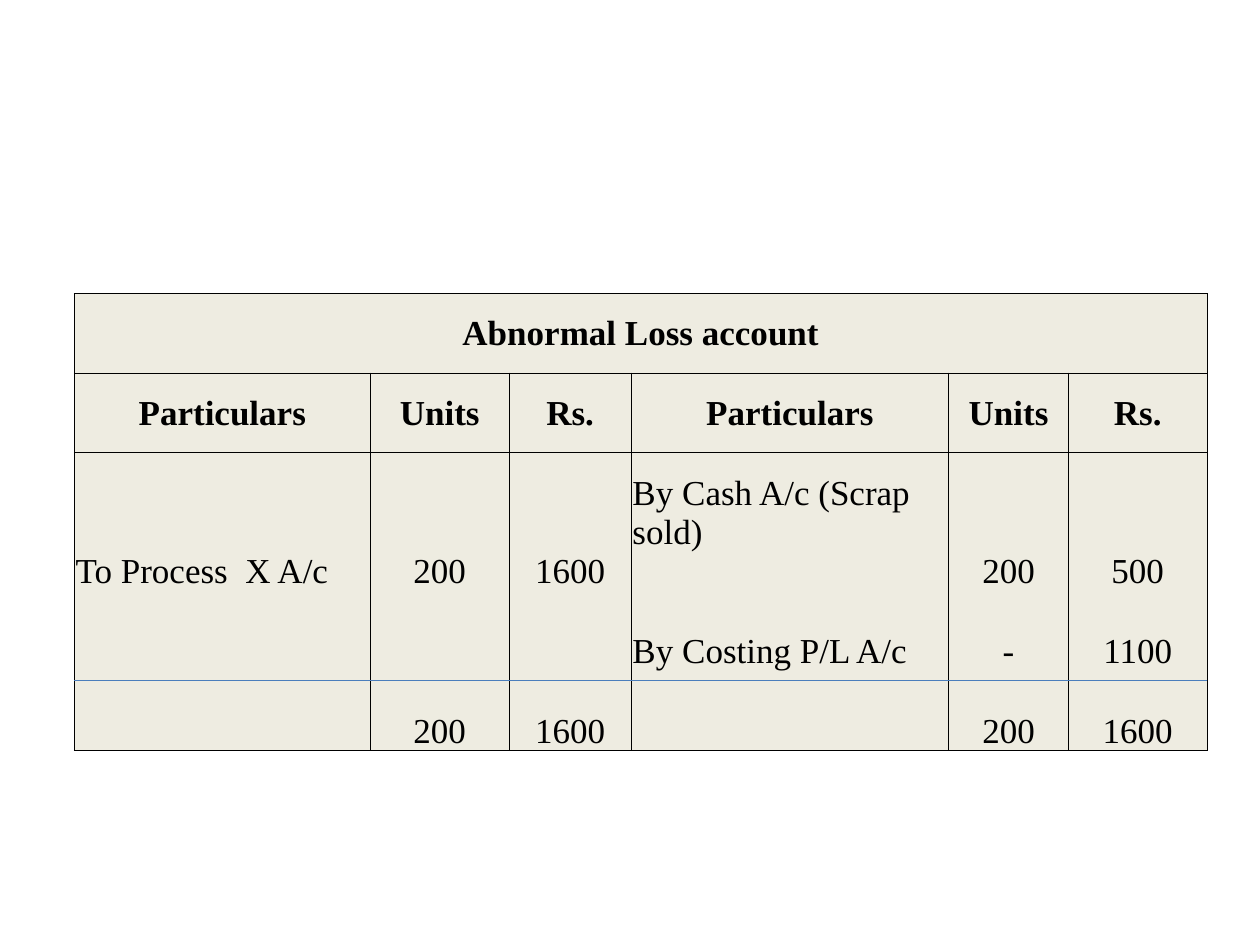
import pptx
import pptx.dml.color
import pptx.enum.shapes
import pptx.enum.text
import pptx.oxml
import pptx.oxml.ns
import pptx.util
from pptx.util import Inches

COLORS = {"ink": "000000", "cell": "EEECE1", "rule": "4B7EBC"}
FONT = "Times New Roman"
COLUMNS = [2.35, 1.1, 0.97, 2.52, 0.95, 1.1]
ROWS = [0.63, 0.63, 1.1, 0.64, 0.63]
HEADINGS = ["Particulars", "Units", "Rs."]
TOTALS = ["", "200", "1600"]
LEDGER = [
    ["Abnormal Loss account"] + [""] * 5,
    HEADINGS * 2,
    ["To Process  X A/c", "200", "1600", "By Cash A/c (Scrap sold)", "200", "500"],
    ["", "", "", "By Costing P/L A/c", "-", "1100"],
    TOTALS * 2,
]
LEDGER_BOX = (0.59, 2.33, sum(COLUMNS), sum(ROWS))
HEADER_ROWS = 2
TEXT_COLUMNS = (0, 3)


def color(name):
    """Return the named colour as an RGB value."""
    return pptx.dml.color.RGBColor.from_string(COLORS[name])


def set_borders(cell, sides):
    """Draw thin borders on the given sides and clear the others."""
    properties = cell._tc.get_or_add_tcPr()
    for index, side in enumerate("LRTB"):
        if side in sides:
            fill = f'<a:solidFill><a:srgbClr val="{COLORS["ink"]}"/></a:solidFill>'
        else:
            fill = "<a:noFill/>"
        border = pptx.oxml.parse_xml(
            f'<a:ln{side} {pptx.oxml.ns.nsdecls("a")} w="6350">{fill}</a:ln{side}>'
        )
        properties.insert(index, border)


def write_cell(cell, text, header, centered):
    """Fill one cell and set its text."""
    cell.fill.solid()
    cell.fill.fore_color.rgb = color("cell")
    cell.margin_left = cell.margin_right = cell.margin_top = Inches(0.01)
    cell.margin_bottom = 0
    anchors = pptx.enum.text.MSO_ANCHOR
    cell.vertical_anchor = anchors.MIDDLE if header else anchors.BOTTOM
    if not text:
        return
    para = cell.text_frame.paragraphs[0]
    aligns = pptx.enum.text.PP_ALIGN
    para.alignment = aligns.CENTER if centered else aligns.LEFT
    span = para.add_run()
    span.text = text
    span.font.name = FONT
    span.font.size = pptx.util.Pt(20)
    span.font.bold = header
    span.font.color.rgb = color("ink")


def add_ledger(page, box):
    """Add the account table in the given box."""
    frame = page.shapes.add_table(len(ROWS), len(COLUMNS), *map(Inches, box))
    table = frame.table
    table.first_row = table.horz_banding = False
    for column, width in zip(table.columns, COLUMNS):
        column.width = Inches(width)
    for row, height in zip(table.rows, ROWS):
        row.height = Inches(height)
    for r, texts in enumerate(LEDGER):
        header = r < HEADER_ROWS
        sides = "LR"
        if r <= HEADER_ROWS:
            sides += "T"
        if header or r == len(LEDGER) - 1:
            sides += "B"
        for c, text in enumerate(texts):
            cell = table.cell(r, c)
            write_cell(cell, text, header, header or c not in TEXT_COLUMNS)
            set_borders(cell, sides)
    table.cell(HEADER_ROWS, 3).margin_bottom = Inches(0.31)
    table.cell(0, 0).merge(table.cell(0, len(COLUMNS) - 1))


def add_total_rule(page, box):
    """Draw the rule above the totals across the given box."""
    left, top, width, height = box
    y = Inches(5.4)
    rule = page.shapes.add_connector(
        pptx.enum.shapes.MSO_CONNECTOR.STRAIGHT, Inches(left), y, Inches(left + width), y
    )
    rule.line.color.rgb = color("rule")
    rule.line.width = pptx.util.Pt(0.75)
    rule._element.spPr.append(
        pptx.oxml.parse_xml(f'<a:effectLst {pptx.oxml.ns.nsdecls("a")}/>')
    )


def main():
    """Build and save the deck."""
    deck = pptx.Presentation()
    deck.slide_width, deck.slide_height = Inches(10), Inches(7.5)
    page = deck.slides.add_slide(deck.slide_layouts[6])
    add_ledger(page, LEDGER_BOX)
    add_total_rule(page, LEDGER_BOX)
    deck.save("out.pptx")


if __name__ == "__main__":
    main()
